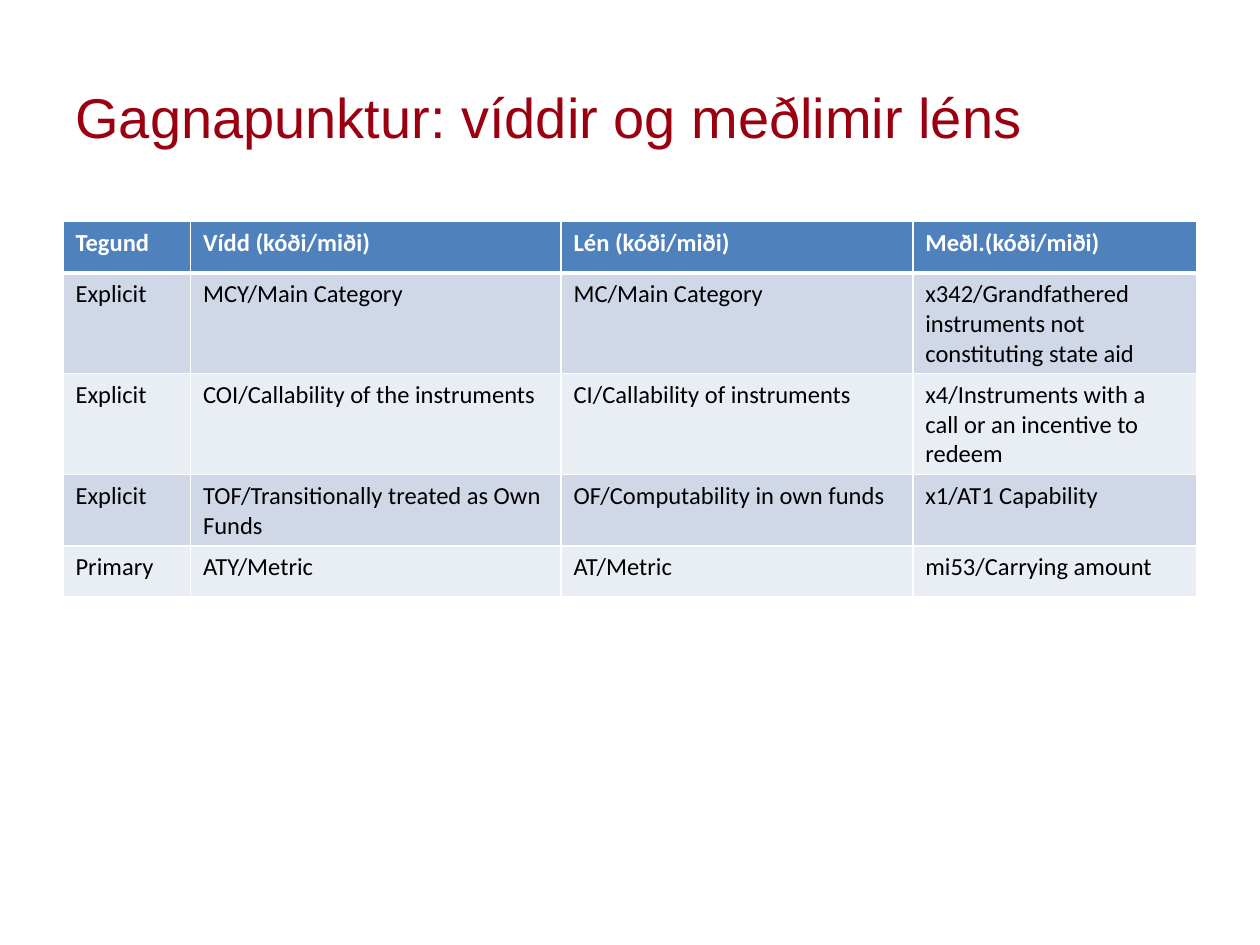
"""Build a slide with a table of data point dimensions and domain members."""
from dataclasses import dataclass

from lxml import etree
from pptx import Presentation
from pptx.dml.color import RGBColor
from pptx.enum.text import MSO_ANCHOR
from pptx.oxml.ns import qn
from pptx.util import Cm, Pt

MIDDLE = MSO_ANCHOR.MIDDLE


@dataclass(frozen=True)
class Theme:
    title_font: str = "Arial"
    table_font: str = "Calibri"
    title_size: int = 32
    table_size: int = 14
    title_color: str = "9B0011"
    header_fill: str = "4F81BD"
    band_fills: tuple = ("D0D8E8", "E9EDF4")
    white: str = "FFFFFF"
    black: str = "000000"
    thin_line: int = 1
    thick_line: int = 3


HEADERS = ("Tegund", "Vídd (kóði/miði)", "Lén (kóði/miði)", "Meðl.(kóði/miði)")
DATA_POINTS = (
    ("Explicit", "MCY/Main Category", "MC/Main Category",
     "x342/Grandfathered instruments not constituting state aid"),
    ("Explicit", "COI/Callability of the instruments", "CI/Callability of instruments",
     "x4/Instruments with a call or an incentive to redeem"),
    ("Explicit", "TOF/Transitionally treated as Own Funds",
     "OF/Computability in own funds", "x1/AT1 Capability"),
    ("Primary", "ATY/Metric", "AT/Metric", "mi53/Carrying amount"),
)
COLUMN_WIDTHS = (2.57, 7.47, 7.09, 5.72)
ROW_HEIGHT = 1.03


def write_text(frame, text, *, font, size, color, bold=False):
    span = frame.paragraphs[0].add_run()
    span.text = text
    span.font.name = font
    span.font.size = Pt(size)
    span.font.bold = bold
    span.font.color.rgb = RGBColor.from_string(color)


class SlideBuilder:
    def __init__(self, page, theme):
        self.page = page
        self.theme = theme

    def title(self, text, left, top, width, height):
        box = self.page.shapes.add_textbox(Cm(left), Cm(top), Cm(width), Cm(height))
        frame = box.text_frame
        frame.word_wrap = True
        frame.vertical_anchor = MIDDLE
        write_text(frame, text, font=self.theme.title_font,
                   size=self.theme.title_size, color=self.theme.title_color)

    def table(self, rows, left, top, widths, row_height):
        theme = self.theme
        table = self.page.shapes.add_table(
            len(rows), len(widths), Cm(left), Cm(top),
            Cm(sum(widths)), Cm(row_height * len(rows))).table
        for column, width in zip(table.columns, widths):
            column.width = Cm(width)
        for row_index, texts in enumerate(rows):
            table.rows[row_index].height = Cm(row_height)
            header = row_index == 0
            fill = theme.header_fill if header else theme.band_fills[(row_index - 1) % 2]
            for column_index, text in enumerate(texts):
                cell = table.cell(row_index, column_index)
                cell.fill.solid()
                cell.fill.fore_color.rgb = RGBColor.from_string(fill)
                write_text(cell.text_frame, text, font=theme.table_font,
                           size=theme.table_size, bold=header,
                           color=theme.white if header else theme.black)
                self.borders(cell, row_index)

    def borders(self, cell, row_index):
        theme = self.theme
        widths = {
            "L": theme.thin_line,
            "R": theme.thin_line,
            "T": theme.thick_line if row_index == 1 else theme.thin_line,
            "B": theme.thick_line if row_index == 0 else theme.thin_line,
        }
        properties = cell._tc.get_or_add_tcPr()
        for position, (side, width) in enumerate(widths.items()):
            line = etree.Element(qn(f"a:ln{side}"), w=str(Pt(width)))
            fill = etree.SubElement(line, qn("a:solidFill"))
            etree.SubElement(fill, qn("a:srgbClr"), val=theme.white)
            properties.insert(position, line)


def main():
    deck = Presentation()
    deck.slide_width, deck.slide_height = Cm(25.4), Cm(19.05)
    page = deck.slides.add_slide(deck.slide_layouts[6])
    builder = SlideBuilder(page, Theme())
    builder.title("Gagnapunktur: víddir og meðlimir léns", 1.27, 0.76, 22.86, 3.18)
    builder.table((HEADERS, *DATA_POINTS), 1.27, 4.47, COLUMN_WIDTHS, ROW_HEIGHT)
    deck.save("out.pptx")


if __name__ == "__main__":
    main()
